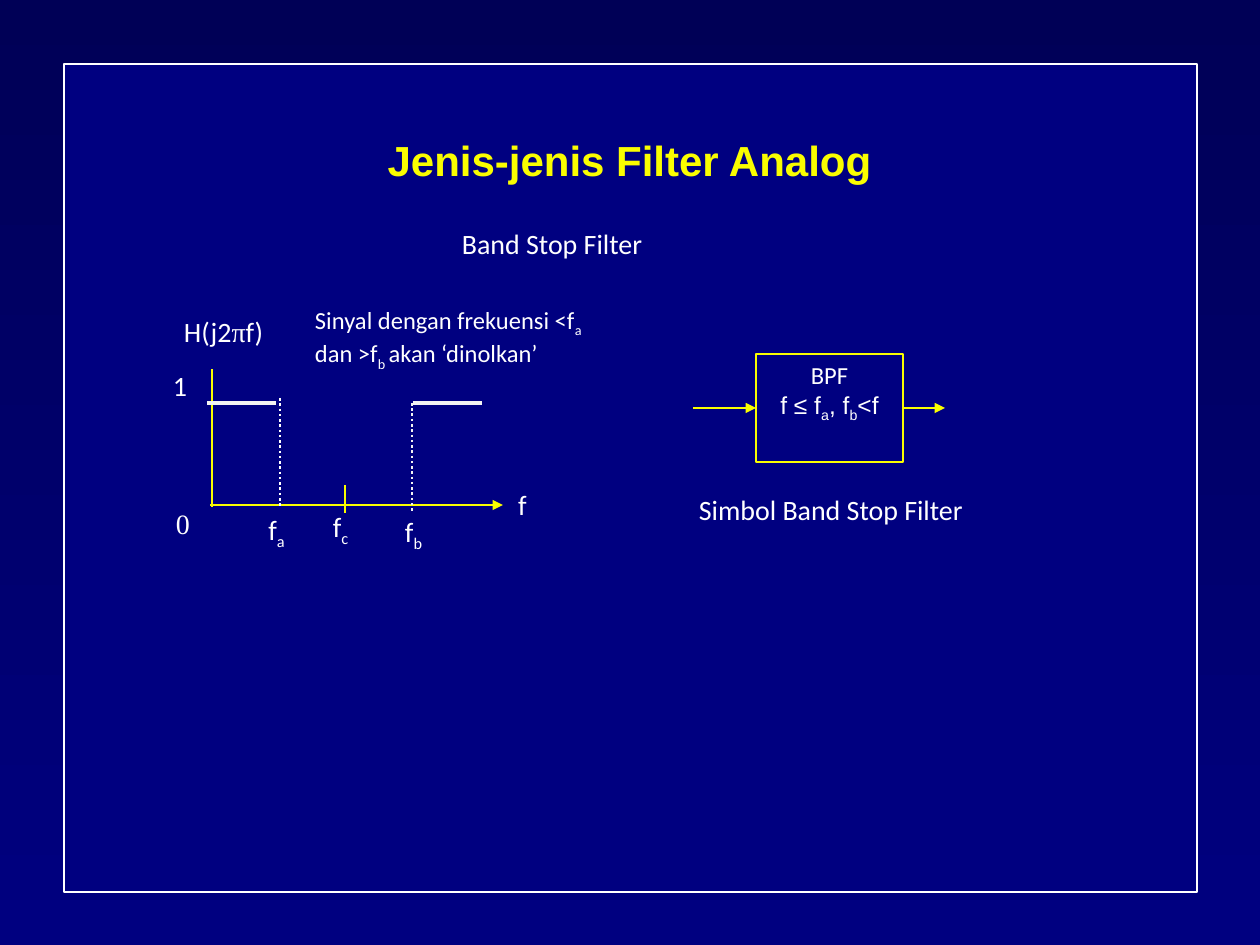
from lxml import etree
from pptx import Presentation
from pptx import util as u
from pptx.dml.color import RGBColor
from pptx.enum import dml, shapes, text
from pptx.oxml.ns import qn

EMU_PER_PX = 914400 / 126
COLORS = {
    "night": "000056",
    "navy": "000080",
    "yellow": "FAFD00",
    "white": "FFFFFF",
    "pale": "F2F2F2",
}
SANS, SERIF, HEADING = "Calibri", "Times New Roman", "Arial"


def px(*lengths):
    """Turn pixel lengths into a list of EMU lengths."""
    return [u.Emu(round(length * EMU_PER_PX)) for length in lengths]


def color(name):
    """Return the named colour."""
    return RGBColor.from_string(COLORS[name])


def paint_background(slide):
    """Fill the background with a vertical gradient."""
    fill = slide.background.fill
    fill.gradient()
    fill.gradient_angle = 270
    for stop, position, name in zip(fill.gradient_stops, (0, 1), ("night", "navy")):
        stop.position = position
        stop.color.rgb = color(name)


def add_run(paragraph, words, size, font=SANS, subscript=False, tint="white"):
    """Append one formatted run."""
    run = paragraph.add_run()
    run.text = words
    run.font.size = u.Pt(size)
    run.font.name = font
    run.font.color.rgb = color(tint)
    if subscript:
        run._r.get_or_add_rPr().set("baseline", "-25000")
    return run


def add_label(slide, box, runs, size=16, align=text.PP_ALIGN.LEFT):
    """Add a text box without margins, made of (words, font, subscript) runs."""
    frame = slide.shapes.add_textbox(*px(*box)).text_frame
    frame.word_wrap = True
    frame.margin_left = frame.margin_right = frame.margin_top = frame.margin_bottom = 0
    paragraph = frame.paragraphs[0]
    paragraph.alignment = align
    paragraph.space_after = u.Pt(10)
    for run in runs:
        add_run(paragraph, run[0], size, *run[1:])


def add_rectangle(slide, box, tint, width, fill=None):
    """Add an outlined rectangle, filled or hollow."""
    shape = slide.shapes.add_shape(shapes.MSO_SHAPE.RECTANGLE, *px(*box))
    shape.shadow.inherit = False
    shape.line.color.rgb = color(tint)
    shape.line.width = u.Pt(width)
    if fill:
        shape.fill.solid()
        shape.fill.fore_color.rgb = color(fill)
    else:
        shape.fill.background()
    return shape


def add_line(slide, ends, tint="yellow", width=0.75, arrow=False, dotted=False):
    """Add a straight line, with an arrowhead or dots if asked."""
    line = slide.shapes.add_connector(shapes.MSO_CONNECTOR.STRAIGHT, *px(*ends))
    line.line.color.rgb = color(tint)
    line.line.width = u.Pt(width)
    if dotted:
        line.line.dash_style = dml.MSO_LINE.ROUND_DOT
    if arrow:
        etree.SubElement(line.line._get_or_add_ln(), qn("a:tailEnd"), type="triangle")
    etree.SubElement(line._element.spPr, qn("a:effectLst"))


def add_title(slide, words):
    """Place and format the title."""
    title = slide.shapes.title
    title.left, title.top, title.width, title.height = px(136, 84, 987, 158)
    title.text_frame.vertical_anchor = text.MSO_ANCHOR.MIDDLE
    paragraph = title.text_frame.paragraphs[0]
    paragraph.alignment = text.PP_ALIGN.CENTER
    paragraph.line_spacing = 0.9
    add_run(paragraph, words, 24, HEADING, tint="yellow").font.bold = True


def add_panel(slide):
    """Put the framed panel behind everything else."""
    panel = add_rectangle(slide, (64, 64, 1133, 828), "white", 1, "navy")
    slide.shapes._spTree.insert(2, panel._element)


def add_filter_symbol(slide):
    """Draw the filter block with its input and output arrows."""
    block = add_rectangle(slide, (756, 354, 147, 108), "yellow", 0.75)
    frame = block.text_frame
    frame.vertical_anchor = text.MSO_ANCHOR.TOP
    paragraph = frame.paragraphs[0]
    paragraph.alignment = text.PP_ALIGN.CENTER
    paragraph.space_after = u.Pt(10)
    add_run(paragraph, "BPF", 14)
    paragraph.add_line_break()
    for words, subscript in (("f ≤ f", False), ("a", True), (", f", False),
                             ("b", True), ("<f", False)):
        add_run(paragraph, words, 14, HEADING, subscript)
    for start, end in ((693, 756), (903, 945)):
        add_line(slide, (start, 408, end, 408), arrow=True)
    add_label(slide, (699, 493, 305, 55), [("Simbol Band Stop Filter",)])


def add_response_plot(slide):
    """Draw the frequency response with its axes and labels."""
    add_line(slide, (212, 369, 212, 507))
    add_line(slide, (210, 505, 503, 505), arrow=True)
    add_line(slide, (345, 485, 345, 513))
    for start in (207, 413):
        add_line(slide, (start, 403, start + 69, 403), "pale", 2.25)
    for x, top, tint in ((280, 398, "white"), (412, 403, "pale")):
        add_line(slide, (x, top, x, top + 110), tint, 1.5, dotted=True)

    add_label(slide, (184, 315, 147, 54), [("H(j2",), ("π", SERIF), ("f)",)])
    add_label(slide, (173, 369, 39, 54), [("1",)])
    add_label(slide, (176, 507, 39, 54), [("0", SERIF)])
    for left, top, index in ((257, 513, "a"), (321, 510, "c"), (394, 515, "b"), (503, 488, "")):
        runs = [("f",)] + ([(index, SANS, True)] if index else [])
        add_label(slide, (left, top, 39, 54), runs, align=text.PP_ALIGN.CENTER)


def main():
    """Build the slide and save it."""
    presentation = Presentation()
    presentation.slide_width, presentation.slide_height = px(1260, 945)
    slide = presentation.slides.add_slide(presentation.slide_layouts[5])
    paint_background(slide)
    add_panel(slide)
    add_title(slide, "Jenis-jenis Filter Analog")
    add_label(slide, (462, 227, 246, 55), [("Band Stop Filter",)])
    add_label(slide, (315, 305, 276, 98),
              [("Sinyal dengan frekuensi <f",), ("a ", SANS, True), ("dan >f",),
               ("b ", SANS, True), ("akan ‘dinolkan’",)], size=14)
    add_filter_symbol(slide)
    add_response_plot(slide)
    presentation.save("out.pptx")


if __name__ == "__main__":
    main()
